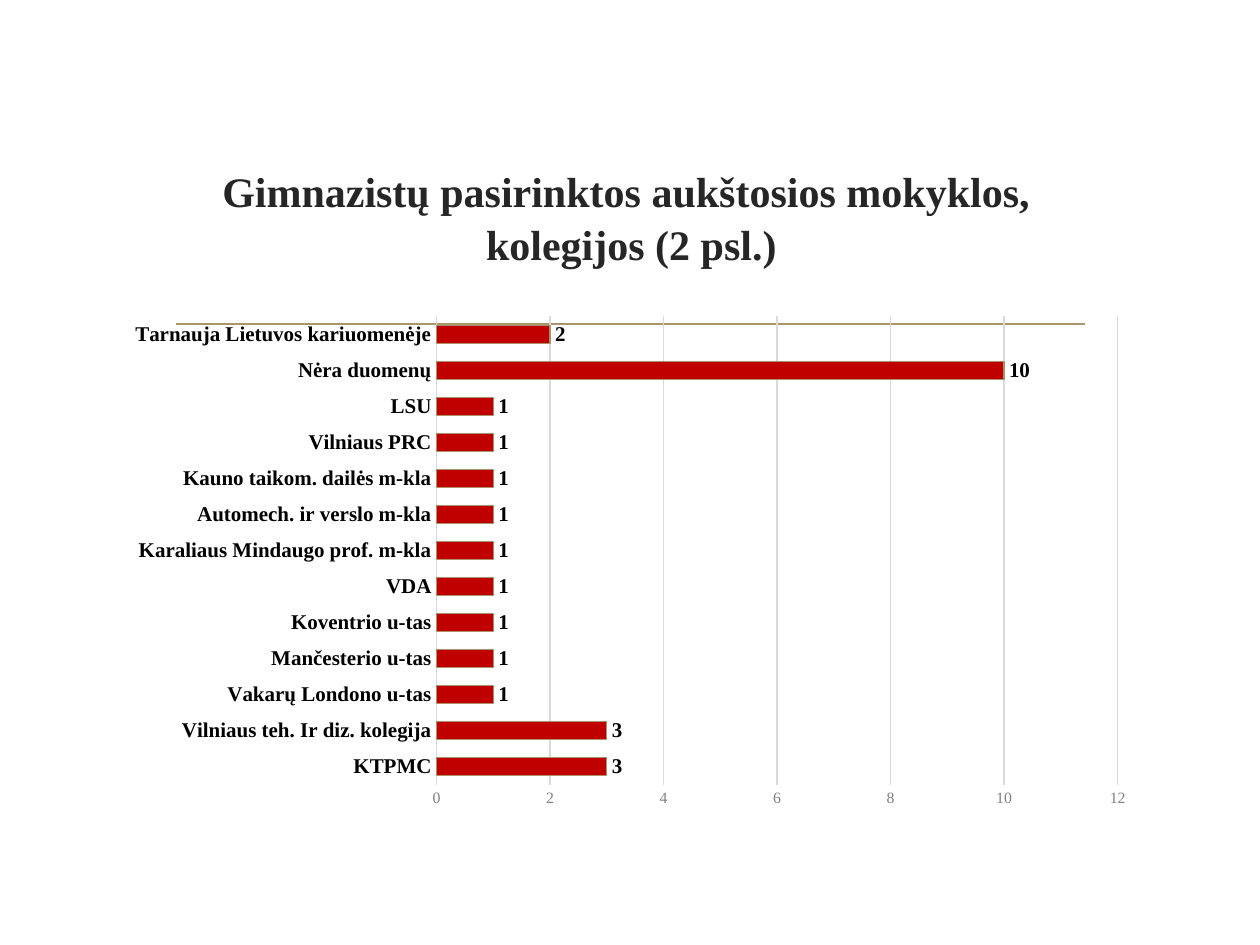
from pptx import Presentation
from pptx.chart.data import CategoryChartData
from pptx.dml.color import RGBColor
from pptx.enum.chart import XL_CHART_TYPE as ChartType, XL_LABEL_POSITION as LabelPosition, XL_TICK_MARK as TickMark
from pptx.enum.shapes import MSO_CONNECTOR as Connector
from pptx.enum.text import MSO_ANCHOR as Anchor, PP_ALIGN as Align
from pptx.oxml.ns import qn
from pptx.util import Pt
from lxml import etree

COLORS = {"rule": "AB946B", "title": "262626", "text": "000000", "muted": "808080",
          "grid": "D9D9D9", "bar": "C00000", "bar_edge": "A79169"}
FONT = "Times New Roman"
SCHOOLS = [
    ("KTPMC", 3),
    ("Vilniaus teh. Ir diz. kolegija", 3),
    ("Vakarų Londono u-tas", 1),
    ("Mančesterio u-tas", 1),
    ("Koventrio u-tas", 1),
    ("VDA", 1),
    ("Karaliaus Mindaugo prof. m-kla", 1),
    ("Automech. ir verslo m-kla", 1),
    ("Kauno taikom. dailės m-kla", 1),
    ("Vilniaus PRC", 1),
    ("LSU", 1),
    ("Nėra duomenų", 10),
    ("Tarnauja Lietuvos kariuomenėje", 2),
]


def style_font(font, size, color, bold=False):
    font.name = FONT
    font.size = Pt(size)
    font.bold = bold
    font.color.rgb = RGBColor.from_string(COLORS[color])


def style_line(line, color, width=0.75):
    line.color.rgb = RGBColor.from_string(COLORS[color])
    line.width = Pt(width)


presentation = Presentation()
presentation.slide_width = Pt(720)
presentation.slide_height = Pt(540)
slide = presentation.slides.add_slide(presentation.slide_layouts[6])

rule = slide.shapes.add_connector(Connector.STRAIGHT, Pt(100.8), Pt(185), Pt(620), Pt(185))
style_line(rule.line, "rule", 1.25)
etree.SubElement(rule._element.spPr, qn("a:effectLst"))

title = slide.shapes.add_textbox(Pt(93), Pt(72), Pt(535.5), Pt(103))
title.text_frame.word_wrap = True
title.text_frame.vertical_anchor = Anchor.MIDDLE
paragraph = title.text_frame.paragraphs[0]
paragraph.text = "Gimnazistų pasirinktos aukštosios mokyklos, \vkolegijos (2 psl.)"
paragraph.alignment = Align.CENTER
paragraph.line_spacing = 1.05
style_font(paragraph.font, 24, "title", bold=True)

chart_data = CategoryChartData()
chart_data.categories = [school for school, count in SCHOOLS]
chart_data.add_series("Series 1", [count for school, count in SCHOOLS])
chart = slide.shapes.add_chart(ChartType.BAR_CLUSTERED, Pt(65.5), Pt(175), Pt(589.5), Pt(292.5), chart_data).chart
chart.has_legend = False
chart.has_title = False
style_font(chart.font, 10, "text")

category_axis = chart.category_axis
category_axis.major_tick_mark = TickMark.NONE
style_font(category_axis.tick_labels.font, 12, "text", bold=True)
style_line(category_axis.format.line, "grid")

value_axis = chart.value_axis
value_axis.minimum_scale = 0
value_axis.maximum_scale = 12
value_axis.major_unit = 2
value_axis.major_tick_mark = TickMark.NONE
value_axis.format.line.fill.background()
style_line(value_axis.major_gridlines.format.line, "grid")
style_font(value_axis.tick_labels.font, 9, "muted")

plot = chart.plots[0]
plot.gap_width = 100
plot.vary_by_categories = False
series = plot.series[0]
series.format.fill.solid()
series.format.fill.fore_color.rgb = RGBColor.from_string(COLORS["bar"])
style_line(series.format.line, "bar_edge")
labels = series.data_labels
labels.show_value = True
labels.position = LabelPosition.OUTSIDE_END
style_font(labels.font, 12, "text", bold=True)

presentation.save("out.pptx")
